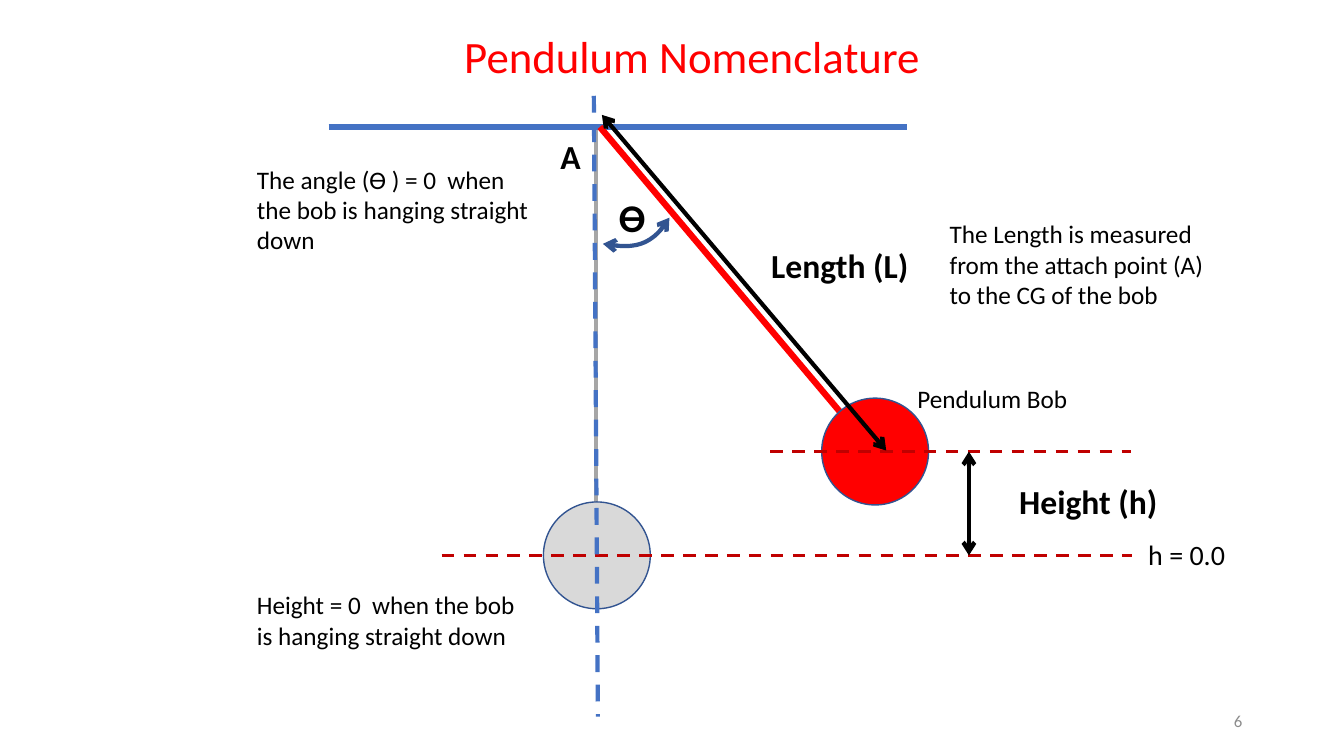
"""Build the pendulum nomenclature slide."""
from lxml import etree
from pptx import Presentation
from pptx.dml.color import RGBColor
from pptx.enum import dml, shapes, text
from pptx.oxml import ns
from pptx.util import Inches, Pt

FONT = "Calibri"
RED = RGBColor(0xFF, 0x00, 0x00)
DARK_RED = RGBColor(0xC0, 0x00, 0x00)
BLUE = RGBColor(0x44, 0x72, 0xC4)
DARK_BLUE = RGBColor(0x32, 0x54, 0x91)
BLACK = RGBColor(0x00, 0x00, 0x00)
GRAY = RGBColor(0xA6, 0xA6, 0xA6)
LIGHT_GRAY = RGBColor(0xD9, 0xD9, 0xD9)
NUMBER_GRAY = RGBColor(0x8C, 0x8C, 0x8C)

BOB_SIZE = 1.06
BEAM_Y = 1.26
REST_Y = 5.51
RAISED_Y = 4.48


def style_line(shape, color, width, dashed=False, arrows=False):
    shape.line.color.rgb = color
    shape.line.width = Pt(width)
    if dashed:
        shape.line.dash_style = dml.MSO_LINE.DASH
    if arrows:
        outline = shape.line._get_or_add_ln()
        for end in ("a:headEnd", "a:tailEnd"):
            etree.SubElement(outline, ns.qn(end), type="arrow")


def add_line(slide, start, end, color, width, dashed=False, arrows=False):
    points = [Inches(value) for value in (*start, *end)]
    line = slide.shapes.add_connector(shapes.MSO_CONNECTOR.STRAIGHT, *points)
    style_line(line, color, width, dashed, arrows)
    etree.SubElement(line._element.spPr, ns.qn("a:effectLst"))


def add_bob(slide, center_x, center_y, color):
    left, top = center_x - BOB_SIZE / 2, center_y - BOB_SIZE / 2
    bob = slide.shapes.add_shape(
        shapes.MSO_SHAPE.OVAL, Inches(left), Inches(top), Inches(BOB_SIZE), Inches(BOB_SIZE))
    bob.shadow.inherit = False
    bob.fill.solid()
    bob.fill.fore_color.rgb = color
    style_line(bob, DARK_BLUE, 1)


def add_angle_arc(slide, start, control_1, control_2, end, steps=24):
    def curve_point(t):
        weights = ((1 - t) ** 3, 3 * t * (1 - t) ** 2, 3 * t ** 2 * (1 - t), t ** 3)
        corners = (start, control_1, control_2, end)
        return tuple(Inches(sum(weight * corner[axis] for weight, corner in zip(weights, corners)))
                     for axis in (0, 1))

    points = [curve_point(step / steps) for step in range(steps + 1)]
    builder = slide.shapes.build_freeform(*points[0])
    builder.add_line_segments(points[1:], close=False)
    arc = builder.convert_to_shape()
    arc.shadow.inherit = False
    arc.fill.background()
    style_line(arc, DARK_BLUE, 3, arrows=True)


def format_text(shape, words, size, color=BLACK, bold=False,
                align=text.PP_ALIGN.LEFT, anchor=text.MSO_ANCHOR.TOP):
    frame = shape.text_frame
    frame.word_wrap = True
    frame.vertical_anchor = anchor
    frame.text = words
    paragraph = frame.paragraphs[0]
    paragraph.alignment = align
    paragraph.font.name = FONT
    paragraph.font.size = Pt(size)
    paragraph.font.bold = bold
    paragraph.font.color.rgb = color


def add_label(slide, box, words, size, **formatting):
    label = slide.shapes.add_textbox(*(Inches(value) for value in box))
    format_text(label, words, size, **formatting)


def add_title(slide, box, words):
    title = slide.shapes.title
    title.left, title.top, title.width, title.height = (Inches(value) for value in box)
    format_text(title, words, 32, color=RED, align=text.PP_ALIGN.CENTER)
    title.text_frame.auto_size = text.MSO_AUTO_SIZE.NONE


def main():
    presentation = Presentation()
    presentation.slide_width = Inches(13.33)
    presentation.slide_height = Inches(7.5)
    slide = presentation.slides.add_slide(presentation.slide_layouts[5])
    add_title(slide, (2.82, 0.23, 8.09, 0.64), "Pendulum Nomenclature")

    add_line(slide, (3.26, BEAM_Y), (9, BEAM_Y), BLUE, 4.5)
    add_line(slide, (5.95, BEAM_Y), (8.36, 4.12), RED, 4.5)
    add_bob(slide, 8.68, RAISED_Y, RED)
    add_line(slide, (5.91, 1.29), (5.91, 5.03), GRAY, 3)
    add_bob(slide, 5.92, REST_Y, LIGHT_GRAY)

    add_line(slide, (4.38, REST_Y), (11.23, REST_Y), DARK_RED, 2.25, dashed=True)
    add_line(slide, (7.64, RAISED_Y), (11.22, RAISED_Y), DARK_RED, 2.25, dashed=True)
    add_line(slide, (9.61, RAISED_Y), (9.61, REST_Y), BLACK, 3, arrows=True)
    add_line(slide, (5.97, 1.14), (8.79, 4.47), BLACK, 3, arrows=True)
    add_line(slide, (5.89, 0.95), (5.93, 7.11), BLUE, 3, dashed=True)
    add_angle_arc(slide, (5.98, 2.42), (6.24, 2.46), (6.45, 2.48), (6.64, 2.16))

    for box, words, size in (
        ((6.04, 1.87, 0.68, 0.57), "ϴ", 28),
        ((7.55, 2.38, 1.95, 0.5), "Length (L)", 24),
        ((10.01, 4.72, 1.95, 0.5), "Height (h)", 24),
        ((5.46, 1.3, 0.5, 0.5), "A", 24),
    ):
        add_label(slide, box, words, size, bold=True)

    for box, words, size in (
        ((2.45, 1.58, 3.02, 1.01), "The angle (ϴ ) = 0  when the bob is hanging straight down", 18),
        ((2.45, 5.8, 2.86, 0.71), "Height = 0  when the bob is hanging straight down", 18),
        ((9.32, 2.12, 2.86, 1.01),
         "The Length is measured from the attach point (A) to the CG of the bob", 18),
        ((9, 3.75, 2.29, 0.4), "Pendulum Bob", 18),
        ((11.29, 5.28, 1.04, 0.44), "h = 0.0", 20),
    ):
        add_label(slide, box, words, size)

    add_label(slide, (9.42, 6.95, 3, 0.4), "6", 12, color=NUMBER_GRAY,
              align=text.PP_ALIGN.RIGHT, anchor=text.MSO_ANCHOR.MIDDLE)
    presentation.save("out.pptx")


if __name__ == "__main__":
    main()
